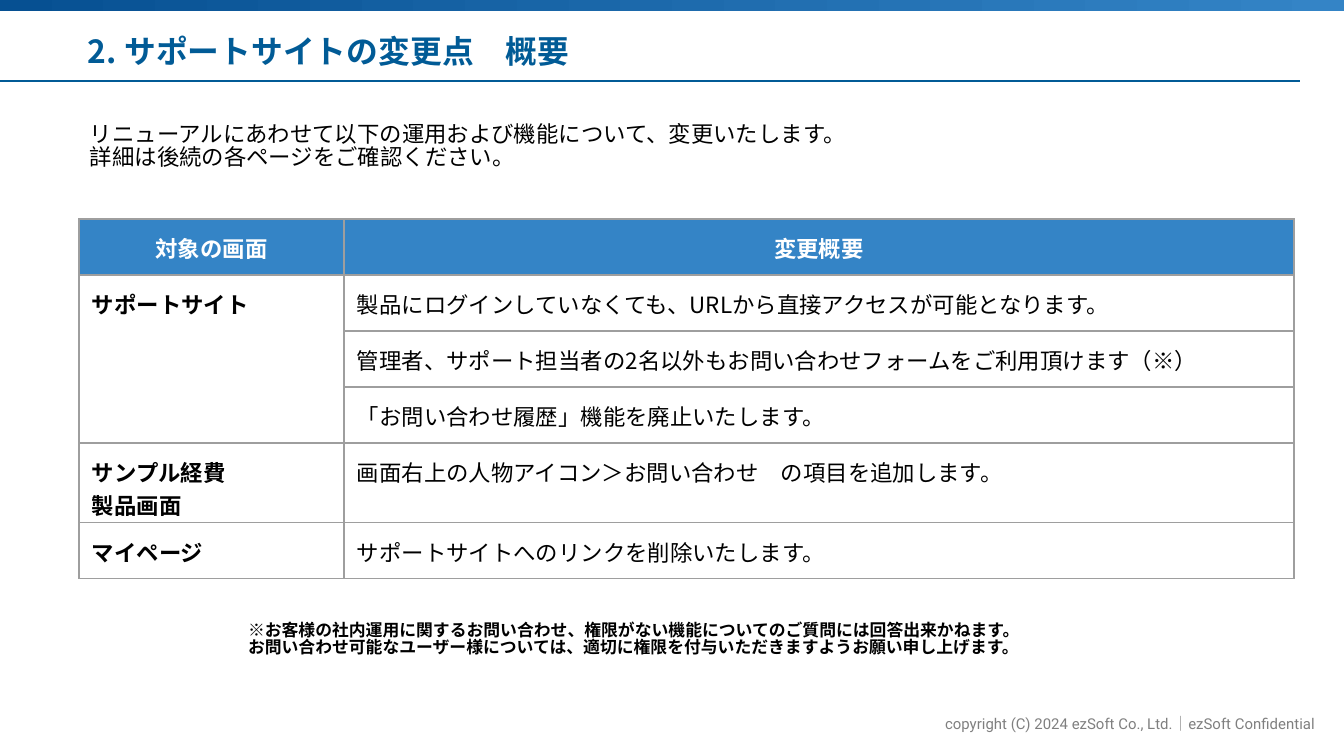
import copy

import pptx
import pptx.dml.color
import pptx.enum.shapes
import pptx.enum.text
import pptx.oxml
import pptx.oxml.ns
import pptx.util

RGBColor = pptx.dml.color.RGBColor
Align = pptx.enum.text.PP_ALIGN
Anchor = pptx.enum.text.MSO_ANCHOR

# Content
TITLE = ["2. サポートサイトの変更点　概要"]
INTRODUCTION = [
    "リニューアルにあわせて以下の運用および機能について、変更いたします。\n"
    "詳細は後続の各ページをご確認ください。"
]
HEADER = ["対象の画面", "変更概要"]
CHANGES = [
    (["サポートサイト"], [
        "製品にログインしていなくても、URLから直接アクセスが可能となります。",
        "管理者、サポート担当者の2名以外もお問い合わせフォームをご利用頂けます（※）",
        "「お問い合わせ履歴」機能を廃止いたします。",
    ]),
    (["サンプル経費", "製品画面"], ["画面右上の人物アイコン＞お問い合わせ　の項目を追加します。"]),
    (["マイページ"], ["サポートサイトへのリンクを削除いたします。"]),
]
NOTE = [
    "※お客様の社内運用に関するお問い合わせ、権限がない機能についてのご質問には回答出来かねます。",
    "お問い合わせ可能なユーザー様については、適切に権限を付与いただきますようお願い申し上げます。",
]
COPYRIGHT = ["copyright (C) 2024 ezSoft Co., Ltd.｜ezSoft Confidential"]

# Style
BLUE = RGBColor(0x34, 0x84, 0xC6)
DARK_BLUE = RGBColor(0x06, 0x50, 0x92)
TITLE_BLUE = RGBColor(0x01, 0x5B, 0x96)
GRAY = RGBColor(0x7F, 0x7F, 0x7F)
BLACK = RGBColor(0x00, 0x00, 0x00)
WHITE = RGBColor(0xFF, 0xFF, 0xFF)
BORDER = "9E9E9E"
FONT = "Noto Sans CJK JP"
SLIDE_WIDTH, SLIDE_HEIGHT = 1344, 756
ROW_HEIGHT = 56
COLUMN_WIDTHS = [265, 950]
PADDING = 13
TIGHT = 0.83


def px(value):
    return pptx.util.Emu(round(value * 914400 / 134.4))


def write(frame, paragraphs, size=12, color=BLACK, bold=False, font=FONT,
          align=Align.LEFT, spacing=None):
    for index, text in enumerate(paragraphs):
        paragraph = frame.paragraphs[0] if index == 0 else frame.add_paragraph()
        paragraph.text = text
        paragraph.alignment = align
        if spacing:
            paragraph.line_spacing = spacing
        for run in paragraph.runs:
            run.font.size = pptx.util.Pt(size)
            run.font.bold = bold
            run.font.color.rgb = color
            run.font.name = font
            properties = run.font._element
            east_asian = properties.makeelement(pptx.oxml.ns.qn("a:ea"), {"typeface": font})
            properties.append(east_asian)
        # Line breaks take the format of the runs around them
        for line_break in paragraph._p.findall(pptx.oxml.ns.qn("a:br")):
            line_break.append(copy.deepcopy(paragraph.runs[0].font._element))


def add_text(slide, box, paragraphs, insets=(PADDING, PADDING), grow=True,
             anchor=Anchor.TOP, **style):
    frame = slide.shapes.add_textbox(*map(px, box)).text_frame
    frame.word_wrap = True
    frame.vertical_anchor = anchor
    frame.margin_left = frame.margin_right = px(insets[0])
    frame.margin_top = frame.margin_bottom = px(insets[1])
    if grow:
        frame.auto_size = pptx.enum.text.MSO_AUTO_SIZE.SHAPE_TO_FIT_TEXT
    write(frame, paragraphs, **style)


def style_cell(cell, fill=None):
    cell.margin_left = cell.margin_right = px(PADDING)
    cell.margin_top = cell.margin_bottom = px(PADDING)
    properties = cell._tc.get_or_add_tcPr()
    for side in "LRTB":
        properties.append(pptx.oxml.parse_xml(
            f'<a:ln{side} {pptx.oxml.ns.nsdecls("a")} w="9525"><a:solidFill>'
            f'<a:srgbClr val="{BORDER}"/></a:solidFill></a:ln{side}>'))
    if fill is None:
        cell.fill.background()
    else:
        cell.fill.solid()
        cell.fill.fore_color.rgb = fill


def add_top_band(slide):
    band = slide.shapes.add_shape(
        pptx.enum.shapes.MSO_SHAPE.RECTANGLE, 0, 0, px(SLIDE_WIDTH), px(11))
    band.shadow.inherit = False
    band.line.fill.background()
    band.fill.gradient()
    band.fill.gradient_angle = 0
    for stop, color in zip(band.fill.gradient_stops, (DARK_BLUE, BLUE)):
        stop.color.rgb = color


def add_title_rule(slide):
    rule = slide.shapes.add_connector(
        pptx.enum.shapes.MSO_CONNECTOR.STRAIGHT, 0, px(81), px(1300), px(81))
    rule.line.color.rgb = TITLE_BLUE
    rule.line.width = pptx.util.Pt(0.75)
    properties = rule._element.spPr
    properties.append(properties.makeelement(pptx.oxml.ns.qn("a:effectLst"), {}))


def add_changes_table(slide):
    row_count = 1 + sum(len(details) for _, details in CHANGES)
    table = slide.shapes.add_table(
        row_count, len(COLUMN_WIDTHS), px(79), px(219),
        px(sum(COLUMN_WIDTHS)), px(row_count * ROW_HEIGHT)).table
    table.horz_banding = False
    for column, width in zip(table.columns, COLUMN_WIDTHS):
        column.width = px(width)
    for index, row in enumerate(table.rows):
        row.height = px(ROW_HEIGHT)
        for cell in row.cells:
            style_cell(cell, BLUE if index == 0 else None)

    for index, heading in enumerate(HEADER):
        write(table.cell(0, index).text_frame, [heading],
              color=WHITE, bold=True, align=Align.CENTER)
    first = 1
    for screen, details in CHANGES:
        last = first + len(details) - 1
        if last > first:
            table.cell(first, 0).merge(table.cell(last, 0))
        write(table.cell(first, 0).text_frame, screen, bold=True)
        for offset, detail in enumerate(details):
            write(table.cell(first + offset, 1).text_frame, [detail])
        first = last + 1


def main():
    presentation = pptx.Presentation()
    presentation.slide_width = px(SLIDE_WIDTH)
    presentation.slide_height = px(SLIDE_HEIGHT)
    slide = presentation.slides.add_slide(presentation.slide_layouts[6])

    # Page frame
    add_text(slide, (356, 710, 968, 28), COPYRIGHT, insets=(9, 5),
             size=8, color=GRAY, font="Roboto", align=Align.RIGHT)
    add_top_band(slide)
    add_title_rule(slide)

    # Title, introduction, table and note
    add_text(slide, (79, 24, 1180, 54), TITLE, insets=(9, 9), grow=False,
             anchor=Anchor.MIDDLE, size=17, color=TITLE_BLUE, bold=True)
    add_text(slide, (77, 112, 1199, 82), INTRODUCTION, spacing=TIGHT)
    add_changes_table(slide)
    add_text(slide, (235, 610, 1089, 67), NOTE, size=9, bold=True, spacing=TIGHT)

    presentation.save("out.pptx")


if __name__ == "__main__":
    main()
